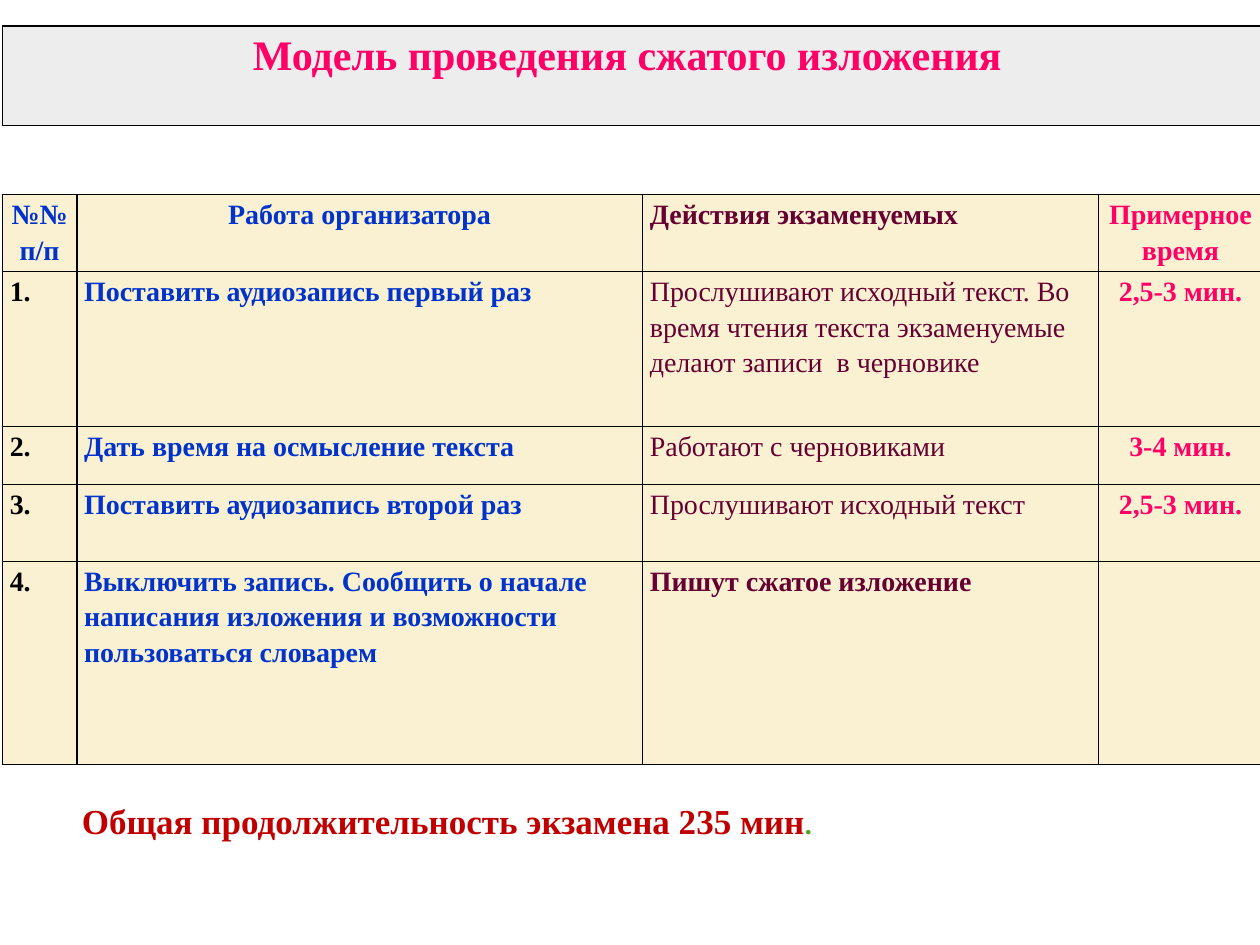
from lxml import etree
from pptx import Presentation
from pptx.dml.color import RGBColor
from pptx.enum import text
from pptx.oxml import ns
from pptx.util import Pt

FONT = "Times New Roman"
COLORS = {
    "blue": "0033CC", "plum": "660033", "pink": "FF0066", "black": "000000",
    "red": "C00000", "green": "54A021", "cream": "FAF1D2", "gray": "EDEDED",
}
LEFT, CENTER, JUSTIFY = (
    text.PP_ALIGN.LEFT, text.PP_ALIGN.CENTER, text.PP_ALIGN.JUSTIFY)

COLUMN_WIDTHS = [42.5, 323.3, 260.6, 93.6]
ROW_HEIGHTS = [44, 88.5, 33, 44, 116]
COLUMN_COLORS = ["blue", "blue", "plum", "pink"]
HEADER = ["№№ п/п", "Работа организатора", "Действия экзаменуемых", "Примерное время"]
STEPS = [
    ["1.", "Поставить аудиозапись первый раз",
     "Прослушивают исходный текст. Во время чтения текста экзаменуемые "
     "делают записи  в черновике", "2,5-3 мин."],
    ["2.", "Дать время на осмысление текста", "Работают с черновиками", "3-4 мин."],
    ["3.", "Поставить аудиозапись второй раз", "Прослушивают исходный текст", "2,5-3 мин."],
    ["4.", "Выключить запись. Сообщить о начале написания изложения "
     "и возможности пользоваться словарем", "Пишут сжатое изложение", ""],
]


def rgb(name):
    return RGBColor.from_string(COLORS[name])


def add_text(p, content, size=16, color="black", bold=True, align=None, spacing=None):
    if align is not None:
        p.alignment = align
    if spacing is not None:
        p.line_spacing = spacing
    r = p.add_run()
    r.text = content
    r.font.name = FONT
    r.font.size = Pt(size)
    r.font.bold = bold
    r.font.color.rgb = rgb(color)


def set_borders(cell, color="black", width=1):
    tc_pr = cell._tc.get_or_add_tcPr()
    for side in ("lnL", "lnR", "lnT", "lnB"):
        ln = etree.SubElement(tc_pr, ns.qn(f"a:{side}"), w=str(Pt(width)))
        fill = etree.SubElement(ln, ns.qn("a:solidFill"))
        etree.SubElement(fill, ns.qn("a:srgbClr"), val=COLORS[color])


def add_grid(s, left, top, widths, heights, fill):
    """Add an empty table with plain filled and bordered cells."""
    table = s.shapes.add_table(
        len(heights), len(widths), Pt(left), Pt(top),
        Pt(sum(widths)), Pt(sum(heights))).table
    table.first_row = table.horz_banding = False
    for column, width in zip(table.columns, widths):
        column.width = Pt(width)
    for row, height in zip(table.rows, heights):
        row.height = Pt(height)
    for cell in table.iter_cells():
        cell.margin_left = cell.margin_right = Pt(4.2)
        cell.margin_top = cell.margin_bottom = 0
        set_borders(cell)
        cell.fill.solid()
        cell.fill.fore_color.rgb = rgb(fill)
    return table


def add_heading(s, left, top, width, height):
    cell = add_grid(s, left, top, [width], [height], "gray").cell(0, 0)
    add_text(cell.text_frame.paragraphs[0], "Модель проведения сжатого изложения ",
             size=24, color="pink", align=CENTER, spacing=1.15)


def add_steps(s, left, top):
    table = add_grid(s, left, top, COLUMN_WIDTHS, ROW_HEIGHTS, "cream")
    for i, row in enumerate([HEADER] + STEPS):
        aligns = [JUSTIFY, LEFT, LEFT, CENTER] if i else [CENTER, CENTER, LEFT, CENTER]
        for j, content in enumerate(row):
            if not content:
                continue
            # Only the examinees' final action is emphasised among the steps.
            bold = j != 2 or i in (0, len(STEPS))
            color = "black" if i and j == 0 else COLUMN_COLORS[j]
            add_text(table.cell(i, j).text_frame.paragraphs[0], content,
                     color=color, bold=bold, align=aligns[j], spacing=1.15)


def add_duration(s, left, top, width, height):
    tf = s.shapes.add_textbox(Pt(left), Pt(top), Pt(width), Pt(height)).text_frame
    tf.word_wrap = True
    tf.auto_size = text.MSO_AUTO_SIZE.SHAPE_TO_FIT_TEXT
    tf.margin_left = Pt(21.6)
    p = tf.paragraphs[0]
    add_text(p, "Общая продолжительность экзамена 235 мин", size=20, color="red")
    add_text(p, ".", color="green")


def main():
    prs = Presentation()
    prs.slide_width, prs.slide_height = Pt(720), Pt(540)
    s = prs.slides.add_slide(prs.slide_layouts[6])
    add_steps(s, 1.4, 111.3)
    add_heading(s, 1.4, 15, 720, 56.7)
    add_duration(s, 25.2, 453.6, 544.3, 31.7)
    prs.save("out.pptx")


if __name__ == "__main__":
    main()
